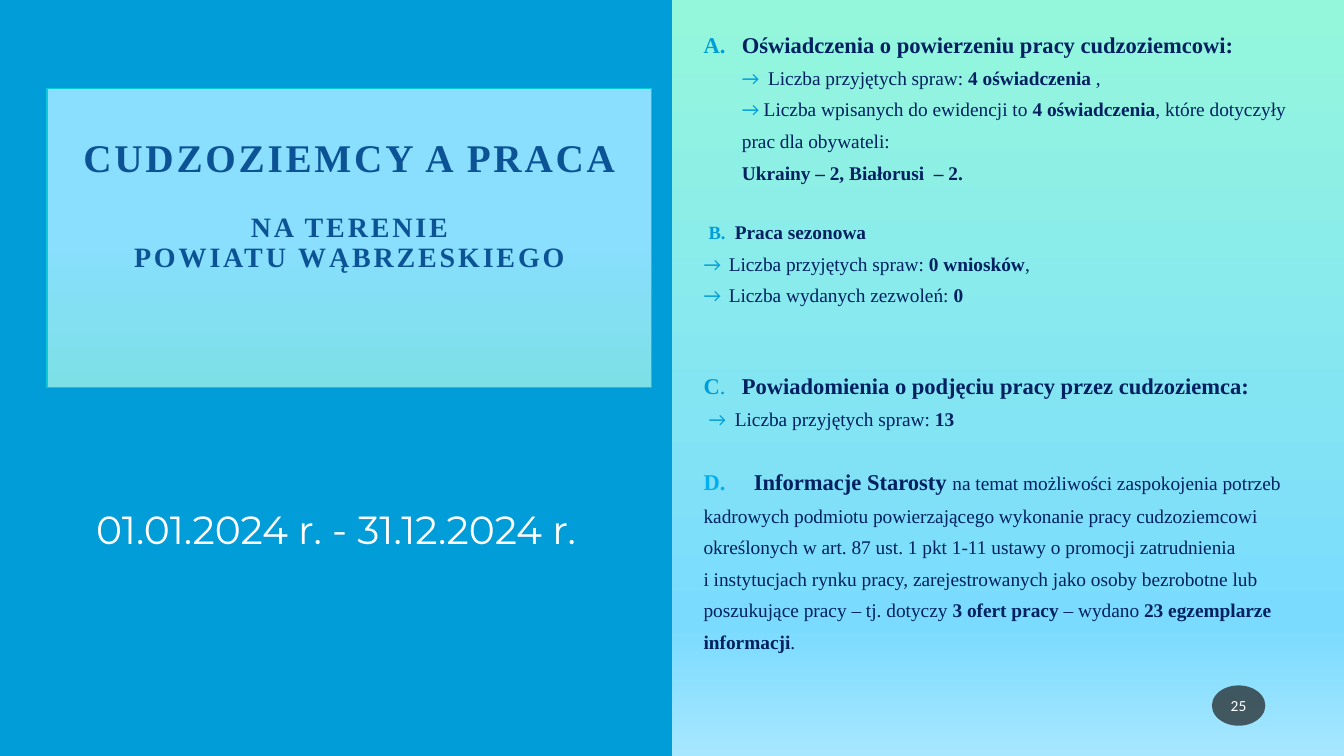
from lxml import etree
from pptx import Presentation
from pptx.dml.color import RGBColor
from pptx.enum.shapes import MSO_SHAPE
from pptx.enum.text import MSO_ANCHOR, PP_ALIGN
from pptx.oxml.ns import qn
from pptx.util import Inches, Pt

WIDTH, HEIGHT = 13.33, 7.5
BLUE, NAVY, SKY, TITLE_BLUE, WHITE = "009DD9", "002060", "00B0F0", "0B5394", "FFFFFF"
SERIF, SANS, DATE_FONT = "Times New Roman", "Calibri", "Montserrat"
HEAD, TEXT = 16.1, 13.8
GAP = 20


def color(value):
    return RGBColor.from_string(value)


def style(run, size, font, tint, bold=False):
    run.font.size, run.font.name, run.font.bold = Pt(size), font, bold
    run.font.color.rgb = color(tint)


def set_gradient(fill, stops):
    """Vertical gradient from (percent, colour) stops."""
    fill.gradient()
    gradient = fill._xPr.find(qn("a:gradFill"))
    for child in list(gradient):
        gradient.remove(child)
    stop_list = etree.SubElement(gradient, qn("a:gsLst"))
    for percent, tint in stops:
        stop = etree.SubElement(stop_list, qn("a:gs"), pos=str(percent * 1000))
        etree.SubElement(stop, qn("a:srgbClr"), val=tint)
    etree.SubElement(gradient, qn("a:lin"), ang="5400000", scaled="0")


def add_block(slide, kind, box):
    block = slide.shapes.add_shape(kind, *(Inches(length) for length in box))
    block.shadow.inherit = False
    block.line.fill.background()
    return block


def add_text_area(slide, box):
    frame = slide.shapes.add_textbox(*(Inches(length) for length in box)).text_frame
    frame.word_wrap = True
    return frame


def write_lines(frame, lines):
    """Yield a paragraph for each line, reusing the first one."""
    for index, line in enumerate(lines):
        yield (frame.add_paragraph() if index else frame.paragraphs[0]), line


def build_title_panel(slide, box):
    left, top, width, height = box
    panel = add_block(slide, MSO_SHAPE.RECTANGLE, box)
    panel.fill.solid()
    panel.fill.fore_color.rgb = color(BLUE)

    # Title card
    card = add_block(slide, MSO_SHAPE.RECTANGLE, (
        left + 0.07 * width, top + 0.117 * height, 0.9 * width, 0.395 * height))
    set_gradient(card.fill, [(46, "8ADFFF"), (100, "7DE0E7")])
    card.line.color.rgb = color("0BC9DA")
    card.line.width = Pt(0.75)
    frame = card.text_frame
    frame.vertical_anchor = MSO_ANCHOR.TOP
    frame.margin_left = frame.margin_right = Inches(0.2)
    frame.margin_top = Inches(0.5)
    titles = [("CUDZOZIEMCY A PRACA", 28, 0), ("NA TERENIE", 20, 23),
              ("POWIATU WĄBRZESKIEGO", 20, 0)]
    for paragraph, (words, size, before) in write_lines(frame, titles):
        paragraph.text = words
        paragraph.alignment = PP_ALIGN.CENTER
        paragraph.line_spacing = 0.9
        paragraph.space_before = Pt(before)
        style(paragraph.runs[0], size, SERIF, TITLE_BLUE, True)
        paragraph.runs[0].font._element.set("spc", "200")

    # Reporting period
    frame = add_text_area(slide, (left, top + 0.57 * height, width, 0.26 * height))
    frame.vertical_anchor = MSO_ANCHOR.MIDDLE
    period = frame.paragraphs[0]
    period.text = "01.01.2024 r. - 31.12.2024 r."
    period.alignment = PP_ALIGN.CENTER
    style(period.runs[0], 28, DATE_FONT, WHITE)


def heading(words, size=HEAD):
    return words, size, SERIF, NAVY, True


def label(words, size=HEAD, tint=BLUE, bold=True):
    return words, size, SERIF, tint, bold


def arrow(gap="\t"):
    return "→" + gap, TEXT, SANS, BLUE


def plain(words):
    return words, TEXT, SERIF, NAVY


def strong(words):
    return words, TEXT, SERIF, NAVY, True


# Each line: left margin, first-line indent, space before, runs
REPORT = [
    (0.38, -0.38, 0, [heading("Oświadczenia o powierzeniu pracy cudzoziemcowi:")]),
    (0.64, -0.26, 0, [arrow(), plain("Liczba przyjętych spraw: "),
                      strong("4 oświadczenia "), plain(",")]),
    (0.38, 0, 0, [arrow(" "), plain("Liczba wpisanych do ewidencji to"),
                  strong(" 4 oświadczenia"),
                  plain(", które dotyczyły prac dla obywateli:")]),
    (0.38, 0, 0, [strong("Ukrainy – 2, Białorusi  – 2.")]),
    (0.31, -0.26, GAP, [label("B.\t", 13.3), heading("Praca sezonowa", TEXT)]),
    (0.25, -0.25, 0, [arrow(), plain("Liczba przyjętych spraw: "),
                      strong("0 wniosków"), plain(",")]),
    (0.25, -0.25, 0, [arrow(), plain("Liczba wydanych zezwoleń: "), strong("0")]),
    (0.38, -0.38, 2 * GAP, [label("C"), label(".\t", bold=False),
                            heading("Powiadomienia o podjęciu pracy przez cudzoziemca:")]),
    (0.31, -0.26, 0, [arrow(), plain("Liczba przyjętych spraw: "), strong("13")]),
    (0, 0, GAP, [label("D.\t", tint=SKY), heading("Informacje Starosty "),
                 plain("na temat możliwości zaspokojenia potrzeb kadrowych podmiotu "
                       "powierzającego wykonanie pracy cudzoziemcowi określonych w art. 87 "
                       "ust. 1 pkt 1-11 ustawy o promocji zatrudnienia")]),
    (0, 0, 0, [plain("i instytucjach rynku pracy, zarejestrowanych jako osoby bezrobotne "
                     "lub poszukujące pracy – tj. dotyczy "),
               strong("3 ofert pracy "), plain("– wydano "),
               strong("23 egzemplarze informacji"), plain(".")]),
]


def build_report(slide, box):
    frame = add_text_area(slide, box)
    for paragraph, (margin, indent, before, runs) in write_lines(frame, REPORT):
        paragraph.line_spacing = 1.36
        paragraph.space_before = Pt(before)
        properties = paragraph._p.get_or_add_pPr()
        properties.set("marL", str(Inches(margin)))
        properties.set("indent", str(Inches(indent)))
        if not margin:
            tabs = etree.SubElement(properties, qn("a:tabLst"))
            etree.SubElement(tabs, qn("a:tab"), pos=str(Inches(0.38)), algn="l")
        for words, *look in runs:
            run = paragraph.add_run()
            run.text = words
            style(run, *look)

    # Lettered first heading
    properties = frame.paragraphs[0]._p.get_or_add_pPr()
    bullet_color = etree.SubElement(properties, qn("a:buClr"))
    etree.SubElement(bullet_color, qn("a:srgbClr"), val=BLUE)
    etree.SubElement(properties, qn("a:buFont"), typeface=SERIF)
    etree.SubElement(properties, qn("a:buAutoNum"), type="alphaUcPeriod")


def build_page_number(slide, box):
    badge = add_block(slide, MSO_SHAPE.OVAL, box)
    badge.fill.solid()
    badge.fill.fore_color.rgb = color("1D1D1D")
    tint = badge.fill._xPr.find(qn("a:solidFill"))[0]
    etree.SubElement(tint, qn("a:alpha"), val="70000")
    frame = badge.text_frame
    frame.margin_left = frame.margin_right = Inches(0.02)
    frame.vertical_anchor = MSO_ANCHOR.MIDDLE
    number = frame.paragraphs[0]
    number.text = "25"
    number.alignment = PP_ALIGN.CENTER
    style(number.runs[0], 11, SANS, WHITE)


def main():
    deck = Presentation()
    deck.slide_width, deck.slide_height = Inches(WIDTH), Inches(HEIGHT)
    slide = deck.slides.add_slide(deck.slide_layouts[6])
    set_gradient(slide.background.fill, [(0, "94F7DC"), (83, "7BDBFF"), (100, "A7E7FF")])
    build_title_panel(slide, (0, 0, WIDTH / 2, HEIGHT))
    build_report(slide, (6.88, 0.16, 6.1, 7.23))
    build_page_number(slide, (12.02, 6.8, 0.53, 0.4))
    deck.save("out.pptx")


if __name__ == "__main__":
    main()
